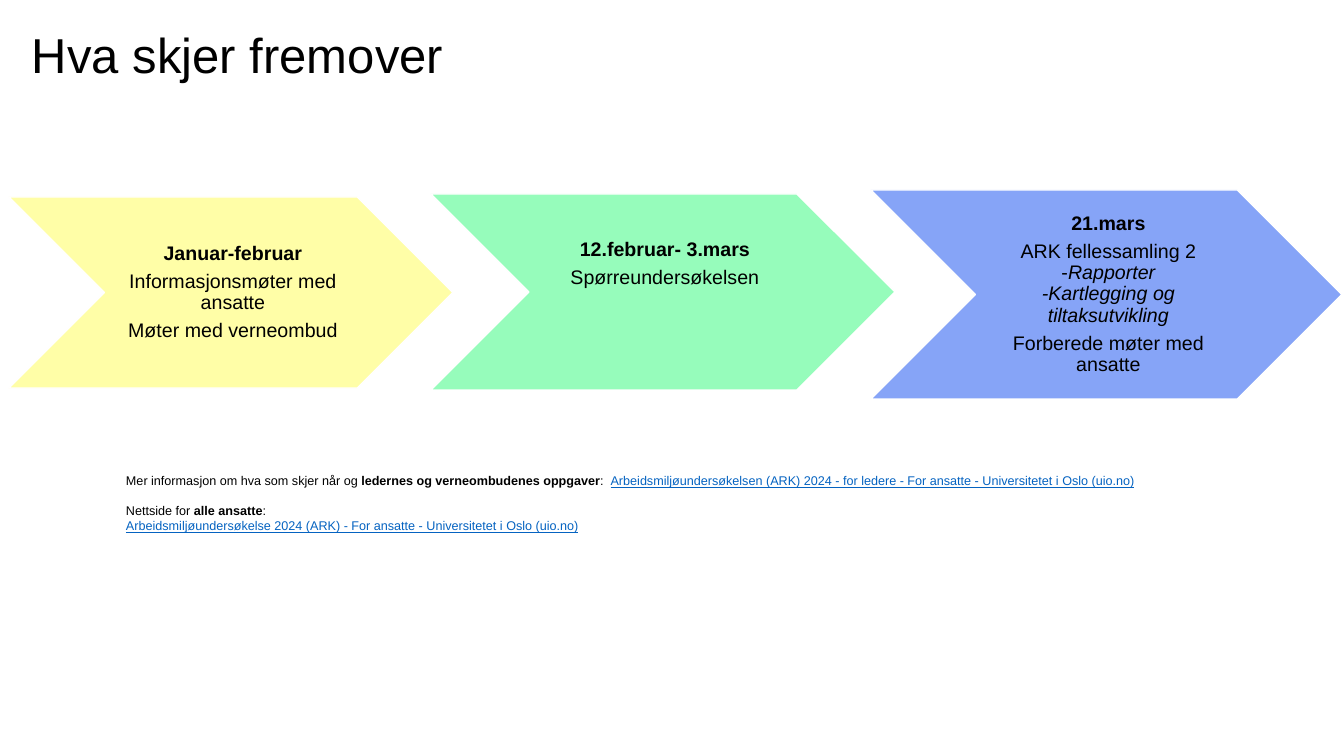
from lxml.etree import SubElement
from pptx import Presentation
from pptx.dml.color import RGBColor
from pptx.enum.shapes import MSO_SHAPE
from pptx.enum.text import MSO_ANCHOR, PP_ALIGN
from pptx.oxml.ns import qn
from pptx.util import Emu, Pt

COLORS = {"text": "000000", "link": "0563C1", "edge": "FFFFFF",
          "yellow": "FFFEA7", "green": "96FCBB", "blue": "86A4F7"}

TITLE = [[("Hva skjer fremover", "")]]
TITLE_BOX = (32, 31, 1159, 95)

STEPS = [
    {"box": (9, 197, 444, 191), "color": "yellow", "bottom": 2, "text": [
        [("Januar-februar", "bold")],
        [("Informasjonsmøter med ansatte", "")],
        [("Møter med verneombud", "")],
    ]},
    {"box": (431, 194, 464, 196), "color": "green", "bottom": 58, "text": [
        [("12.februar- 3.mars", "bold")],
        [("Spørreundersøkelsen", "")],
    ]},
    {"box": (871, 190, 471, 209), "color": "blue", "bottom": 2, "text": [
        [("21.mars", "bold")],
        [("ARK fellessamling 2\n-", ""),
         ("Rapporter\n-Kartlegging og tiltaksutvikling", "italic")],
        [("Forberede møter med ansatte", "")],
    ]},
]

LINKS = [
    [("Mer informasjon om hva som skjer når og ", ""),
     ("ledernes og verneombudenes oppgaver", "bold"),
     (":  ", ""),
     ("Arbeidsmiljøundersøkelsen (ARK) 2024 - for ledere - For ansatte"
      " - Universitetet i Oslo (uio.no)", "link")],
    [("Nettside for ", ""), ("alle ansatte", "bold"), (":", "")],
    [("Arbeidsmiljøundersøkelse 2024 (ARK) - For ansatte"
      " - Universitetet i Oslo (uio.no)", "link")],
]
LINKS_BOX = (116, 468, 1106, 254)

PX = 914400 / 100.8


def px(*lengths):
    return [Emu(round(length * PX)) for length in lengths]


def color(name):
    return RGBColor.from_string(COLORS[name])


def write(frame, content, size, margins, spacing=1.0, after=0,
          align=PP_ALIGN.LEFT, anchor=MSO_ANCHOR.TOP):
    frame.word_wrap = True
    frame.vertical_anchor = anchor
    (frame.margin_left, frame.margin_top,
     frame.margin_right, frame.margin_bottom) = px(*margins)
    for index, pieces in enumerate(content):
        paragraph = frame.add_paragraph() if index else frame.paragraphs[0]
        paragraph.alignment = align
        paragraph.line_spacing = spacing
        paragraph.space_after = Pt(after)
        for words, style in pieces:
            for number, line in enumerate(words.split("\n")):
                if number:
                    paragraph.add_line_break()
                run = paragraph.add_run()
                run.text = line
                run.font.name = "Arial"
                run.font.size = Pt(size)
                run.font.bold = style == "bold"
                run.font.italic = style == "italic"
                run.font.underline = style == "link"
                run.font.color.rgb = color("link" if style == "link" else "text")
        for line_break in paragraph._p.findall(qn("a:br")):
            SubElement(line_break, qn("a:rPr"), sz=str(size * 100))


presentation = Presentation()
presentation.slide_width, presentation.slide_height = px(1344, 756)
slide = presentation.slides.add_slide(presentation.slide_layouts[6])

heading = slide.shapes.add_textbox(*px(*TITLE_BOX))
write(heading.text_frame, TITLE, 35, (0, 0, 0, 0), spacing=0.9)

for step in STEPS:
    chevron = slide.shapes.add_shape(MSO_SHAPE.CHEVRON, *px(*step["box"]))
    chevron.shadow.inherit = False
    chevron.fill.solid()
    chevron.fill.fore_color.rgb = color(step["color"])
    chevron.line.color.rgb = color("edge")
    chevron.line.width = Pt(1)
    write(chevron.text_frame, step["text"], 14, (6, 2, 2, step["bottom"]),
          spacing=0.9, after=5, align=PP_ALIGN.CENTER, anchor=MSO_ANCHOR.MIDDLE)

further_reading = slide.shapes.add_textbox(*px(*LINKS_BOX))
write(further_reading.text_frame, LINKS, 9, (10, 5, 10, 5))
further_reading.text_frame.paragraphs[1].space_before = Pt(10.5)

presentation.save("out.pptx")
